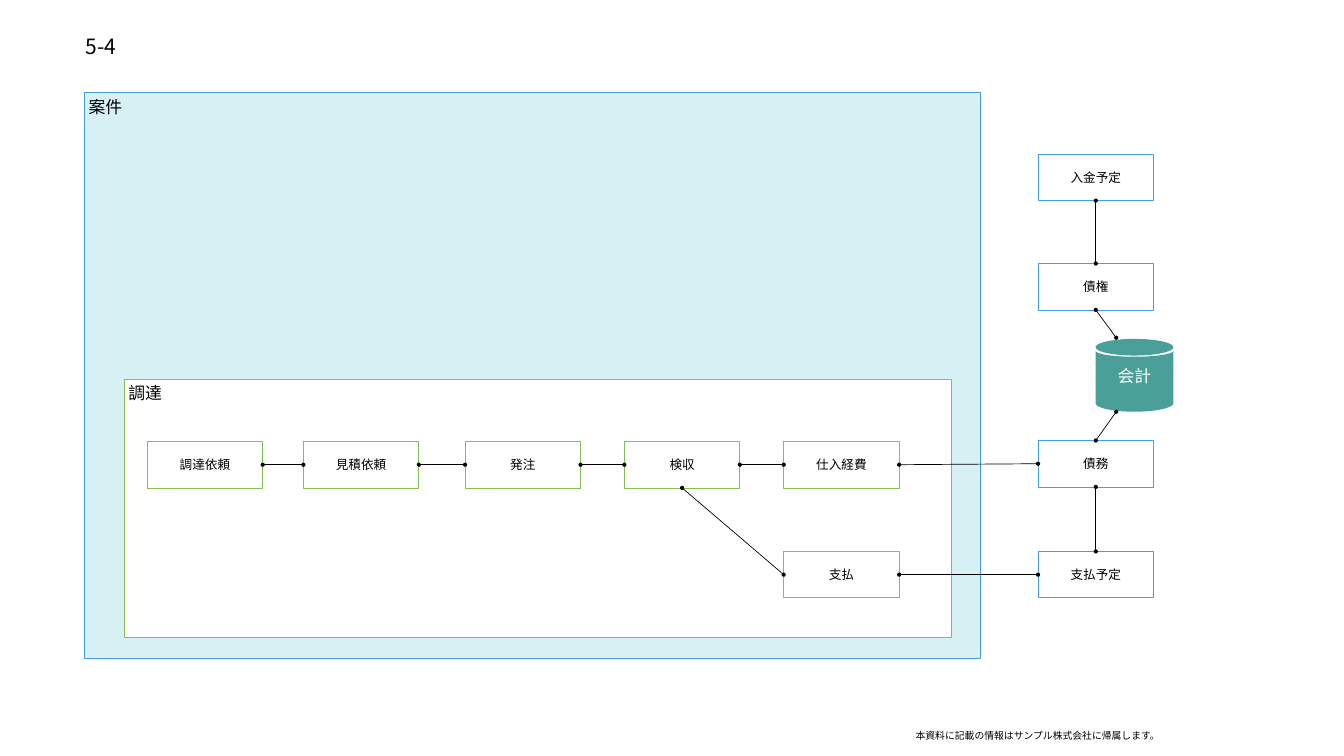
"""Build the procurement flow slide with its accounting links."""
from math import cos, pi, sin

from lxml.etree import SubElement
from pptx import Presentation
from pptx.dml.color import RGBColor
from pptx.enum.shapes import MSO_CONNECTOR, MSO_SHAPE
from pptx.enum.text import MSO_ANCHOR, PP_ALIGN
from pptx.oxml.ns import qn
from pptx.util import Cm, Pt

FONT = "Noto Sans CJK JP"
COLORS = {"text": "000000", "white": "FFFFFF", "blue": "469DE3",
          "green": "82BF55", "project": "D7F0F4", "ledger": "4A9F99"}
TITLE = "5-4"
NOTICE = "本資料に記載の情報はサンプル株式会社に帰属します。"
LEDGER = "会計"
PANELS = [
    ("案件", (4.27, 4.65, 45.14, 28.52), "project", "blue"),
    ("調達", (6.27, 19.1, 41.68, 13), "white", "green"),
]
STEP_SIZE = (5.82, 2.34)
ACCOUNT_LEFT = 52.32
STEPS = [
    ("入金予定", ACCOUNT_LEFT, 7.77, "blue"),
    ("債権", ACCOUNT_LEFT, 13.28, "blue"),
    ("債務", ACCOUNT_LEFT, 22.2, "blue"),
    ("支払予定", ACCOUNT_LEFT, 27.79, "blue"),
    ("調達依頼", 7.42, 22.25, "green"),
    ("見積依頼", 15.29, 22.25, "green"),
    ("発注", 23.44, 22.25, "green"),
    ("検収", 31.47, 22.25, "green"),
    ("仕入経費", 39.5, 22.25, "green"),
    ("支払", 39.5, 27.79, "green"),
]
TOP, LEFT, BOTTOM, RIGHT = range(4)
LINKS = [
    ("入金予定", BOTTOM, "債権", TOP),
    ("債務", BOTTOM, "支払予定", TOP),
    ("調達依頼", RIGHT, "見積依頼", LEFT),
    ("見積依頼", RIGHT, "発注", LEFT),
    ("発注", RIGHT, "検収", LEFT),
    ("検収", RIGHT, "仕入経費", LEFT),
    ("検収", BOTTOM, "支払", LEFT),
    ("仕入経費", RIGHT, "債務", LEFT),
    ("支払", RIGHT, "支払予定", LEFT),
]
LEDGER_LINKS = [("債権", BOTTOM, (56.26, 17.02)), ("債務", TOP, (56.26, 20.75))]
LEDGER_CENTER, LEDGER_RADIUS = 57.18, 1.96
LID_Y, LID_DEPTH = 17.5, 0.42
BODY_TOP, BODY_TOP_DEPTH = 17.68, 0.3
BODY_BOTTOM, BODY_BOTTOM_DEPTH = 20.32, 0.43


def color(name):
    return RGBColor.from_string(COLORS[name])


def write(shape, text, size, ink="text", align=PP_ALIGN.LEFT,
          anchor=MSO_ANCHOR.MIDDLE, inset=0.2, wrap=True):
    frame = shape.text_frame
    frame.text = text
    frame.word_wrap = wrap
    frame.vertical_anchor = anchor
    frame.margin_left = frame.margin_right = Cm(inset)
    frame.margin_top = frame.margin_bottom = Cm(inset)
    paragraph = frame.paragraphs[0]
    paragraph.alignment = align
    font = paragraph.runs[0].font
    font.size, font.name = Pt(size), FONT
    font.color.rgb = color(ink)
    SubElement(paragraph.runs[0].font._element, qn("a:ea"), typeface=FONT)


def add_box(shapes, place, fill, line):
    box = shapes.add_shape(MSO_SHAPE.RECTANGLE, *map(Cm, place))
    box.shadow.inherit = False
    box.fill.solid()
    box.fill.fore_color.rgb = color(fill)
    box.line.color.rgb = color(line)
    box.line.width = Pt(1)
    return box


def arc(y, depth, start, end):
    angles = [start + (end - start) * i / 40 for i in range(41)]
    return [(Cm(LEDGER_CENTER + LEDGER_RADIUS * cos(a)), Cm(y + depth * sin(a)))
            for a in angles]


def add_ledger(shapes):
    lid = arc(LID_Y, LID_DEPTH, 0, 2 * pi)
    body = (arc(BODY_TOP, BODY_TOP_DEPTH, pi, 0)
            + arc(BODY_BOTTOM, BODY_BOTTOM_DEPTH, 0, pi))
    builder = shapes.build_freeform(*lid[0], scale=1.0)
    builder.add_line_segments(lid[1:], close=True)
    builder.move_to(*body[0])
    builder.add_line_segments(body[1:], close=True)
    ledger = builder.convert_to_shape()
    ledger.shadow.inherit = False
    ledger.fill.solid()
    ledger.fill.fore_color.rgb = color("ledger")
    ledger.line.fill.background()
    write(ledger, LEDGER, 24, "white", PP_ALIGN.CENTER)


def add_link(shapes, start, start_side, end=None, end_side=None, point=(0, 0)):
    link = shapes.add_connector(MSO_CONNECTOR.STRAIGHT, 0, 0, *map(Cm, point))
    link.begin_connect(start, start_side)
    if end is not None:
        link.end_connect(end, end_side)
    link.line.color.rgb = color("text")
    link.line.width = Pt(1)
    outline = link.line._get_or_add_ln()
    for tag in ("a:headEnd", "a:tailEnd"):
        SubElement(outline, qn(tag), type="oval")
    SubElement(link._element.spPr, qn("a:effectLst"))


def main():
    deck = Presentation()
    deck.slide_width, deck.slide_height = Cm(67.74), Cm(38.1)
    slide = deck.slides.add_slide(deck.slide_layouts[5])
    shapes = slide.shapes

    title = shapes.title
    title.left, title.top, title.width, title.height = map(Cm, (4.17, 1.65, 2.26, 1.35))
    write(title, TITLE, 30, inset=0.15, wrap=False)

    notice = shapes.add_textbox(*map(Cm, (45.95, 36.63, 12.73, 0.89)))
    write(notice, NOTICE, 14)

    for label, place, fill, line in PANELS:
        write(add_box(shapes, place, fill, line), label, 24, anchor=MSO_ANCHOR.TOP)

    add_ledger(shapes)

    steps = {}
    for label, left, top, line in STEPS:
        steps[label] = add_box(shapes, (left, top, *STEP_SIZE), "white", line)
        write(steps[label], label, 18, align=PP_ALIGN.CENTER)

    for start, start_side, end, end_side in LINKS:
        add_link(shapes, steps[start], start_side, steps[end], end_side)
    for start, start_side, point in LEDGER_LINKS:
        add_link(shapes, steps[start], start_side, point=point)

    deck.save("out.pptx")


if __name__ == "__main__":
    main()
